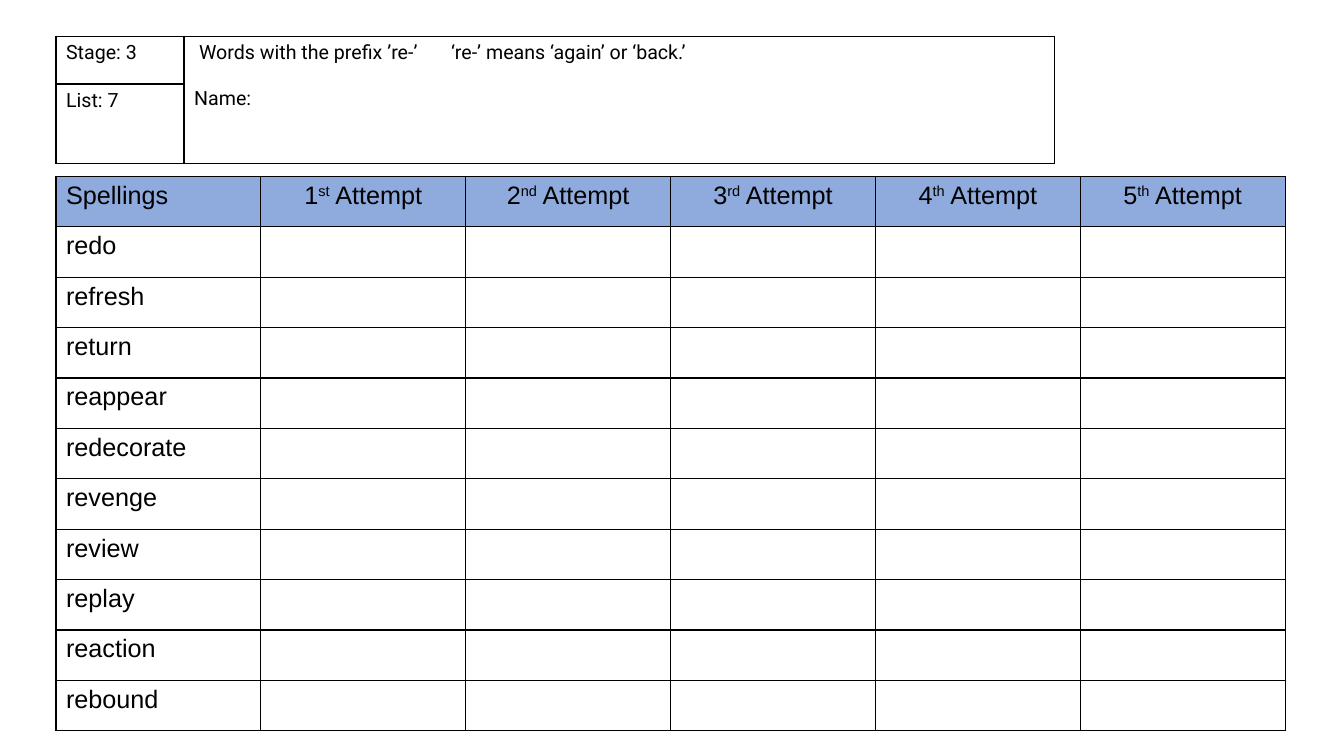
import pptx
import pptx.dml.color
import pptx.enum.text
import pptx.oxml
import pptx.util
from lxml import etree

Pt = pptx.util.Pt
BLACK = pptx.dml.color.RGBColor(0x00, 0x00, 0x00)
HEADER_BLUE = pptx.dml.color.RGBColor(0x8F, 0xAA, 0xDC)
DRAWING = "http://schemas.openxmlformats.org/drawingml/2006/main"

ORDINALS = ["st", "nd", "rd", "th", "th"]
SPELLINGS = ["redo", "refresh", "return", "reappear", "redecorate",
             "revenge", "review", "replay", "reaction", "rebound"]


def write_text(paragraph, text, size=18, font="Arial", color=BLACK,
               align=None, superscript=False):
    """Add one formatted run to a paragraph."""
    if align is not None:
        paragraph.alignment = align
    run = paragraph.add_run()
    run.text = text
    run.font.size = Pt(size)
    run.font.name = font
    run.font.color.rgb = color
    if superscript:
        run.font._element.set("baseline", "30000")


def add_tab_stop(paragraph, indent, position):
    """Indent a paragraph and give it one left tab stop."""
    properties = paragraph._p.get_or_add_pPr()
    properties.set("marL", str(Pt(indent)))
    properties.set("indent", "0")
    tabs = etree.SubElement(properties, f"{{{DRAWING}}}tabLst")
    etree.SubElement(tabs, f"{{{DRAWING}}}tab", pos=str(Pt(position)), algn="l")


def format_cell(cell, fill=None):
    """Draw the four borders of a cell and set its fill."""
    properties = cell._tc.get_or_add_tcPr()
    for side in ("lnL", "lnR", "lnT", "lnB"):
        properties.append(pptx.oxml.parse_xml(
            f'<a:{side} xmlns:a="{DRAWING}" w="{Pt(1)}"><a:solidFill>'
            f'<a:srgbClr val="{BLACK}"/></a:solidFill></a:{side}>'))
    if fill is None:
        cell.fill.background()
    else:
        cell.fill.solid()
        cell.fill.fore_color.rgb = fill


def add_grid(slide, left, top, widths, heights):
    """Add a plain bordered table with the given column and row sizes."""
    table = slide.shapes.add_table(
        len(heights), len(widths), Pt(left), Pt(top),
        Pt(sum(widths)), Pt(sum(heights))).table
    table.first_row = False
    table.horz_banding = False
    for column, width in zip(table.columns, widths):
        column.width = Pt(width)
    for row, height in zip(table.rows, heights):
        row.height = Pt(height)
    for cell in table.iter_cells():
        format_cell(cell)
    return table


def add_list_details(slide, left, top, width, height):
    """Add the table with the stage, list number, rule and name."""
    label_width = 91.5
    table = add_grid(slide, left, top, [label_width, width - label_width],
                     [height / 2] * 2)
    table.cell(0, 1).merge(table.cell(1, 1))
    for row, label in enumerate(["Stage: 3", "List: 7"]):
        write_text(table.cell(row, 0).text_frame.paragraphs[0], label,
                   size=14, font="Roboto")
    frame = table.cell(0, 1).text_frame
    rule = frame.paragraphs[0]
    add_tab_stop(rule, 3.5, 170.5)
    write_text(rule, "Words with the prefix ’re-’\t‘re-’ means ‘again’ or ‘back.’",
               size=14, font="Roboto")
    name = frame.add_paragraph()
    name.space_before = Pt(16.5)
    write_text(name, "Name:", size=14, font="Roboto")


def add_practice_table(slide, left, top, width, height):
    """Add the spelling list with a column for each attempt."""
    columns, rows = len(ORDINALS) + 1, len(SPELLINGS) + 1
    table = add_grid(slide, left, top, [width / columns] * columns,
                     [height / rows] * rows)
    for row, word in enumerate(["Spellings"] + SPELLINGS):
        write_text(table.cell(row, 0).text_frame.paragraphs[0], word)
    for number, ordinal in enumerate(ORDINALS, start=1):
        paragraph = table.cell(0, number).text_frame.paragraphs[0]
        write_text(paragraph, str(number), align=pptx.enum.text.PP_ALIGN.CENTER)
        write_text(paragraph, ordinal, superscript=True)
        write_text(paragraph, " Attempt")
    for column in range(columns):
        cell = table.cell(0, column)
        cell.fill.solid()
        cell.fill.fore_color.rgb = HEADER_BLUE


def main():
    """Build the spelling practice slide and save it."""
    presentation = pptx.Presentation()
    presentation.slide_width = Pt(960)
    presentation.slide_height = Pt(540)
    slide = presentation.slides.add_slide(presentation.slide_layouts[6])
    add_practice_table(slide, 40, 126, 878, 396)
    add_list_details(slide, 40, 26, 713, 68)
    presentation.save("out.pptx")


if __name__ == "__main__":
    main()
